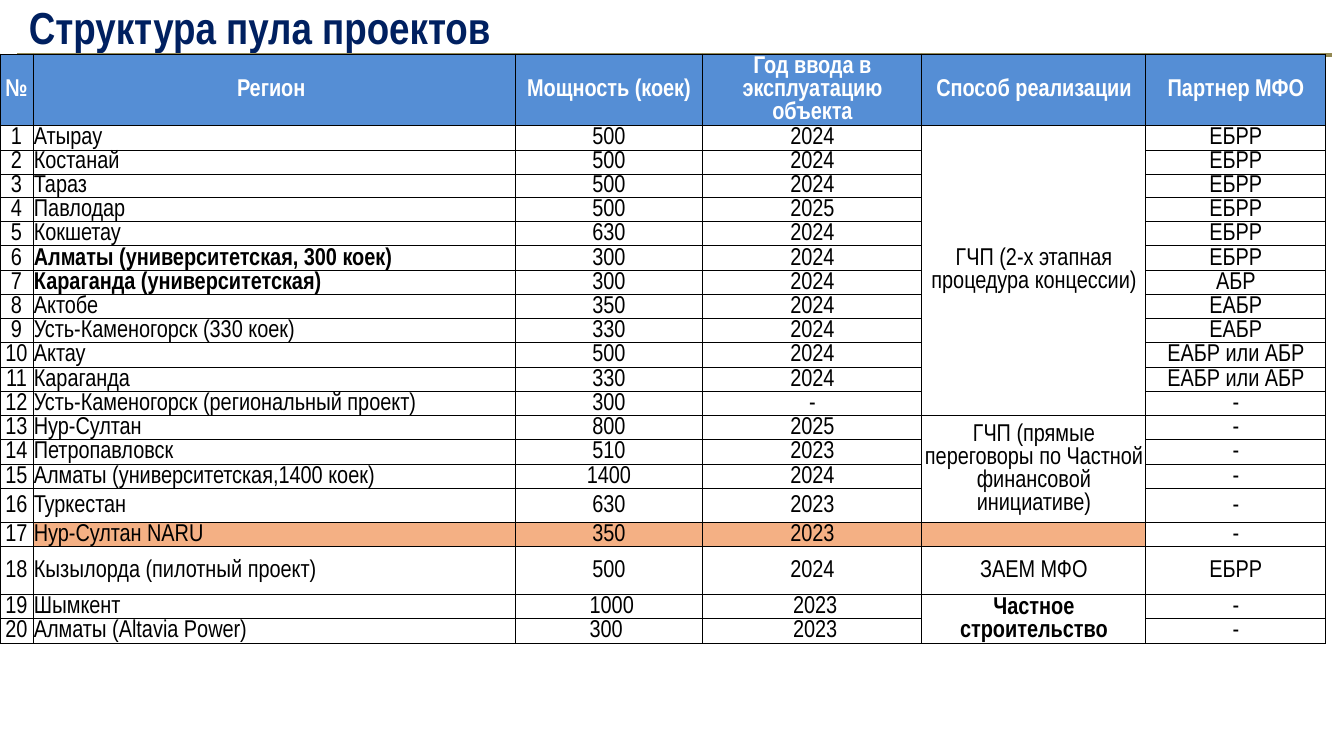
from lxml import etree
from pptx import Presentation
from pptx.dml.color import RGBColor
from pptx.enum.shapes import MSO_CONNECTOR
from pptx.enum.text import MSO_ANCHOR, MSO_AUTO_SIZE, PP_ALIGN
from pptx.oxml.ns import qn
from pptx.util import Emu, Pt

LEFT, CENTER = PP_ALIGN.LEFT, PP_ALIGN.CENTER
MIDDLE = MSO_ANCHOR.MIDDLE
NO_FIT = MSO_AUTO_SIZE.NONE
STRAIGHT = MSO_CONNECTOR.STRAIGHT
TITLE_ONLY = 5

COLORS = {
    "navy": "002060",
    "gold": "938953",
    "blue": "558ED5",
    "peach": "F4B084",
    "white": "FFFFFF",
    "black": "000000",
}

# Column and row edges of the table, in px
COLS = [0, 33, 515, 703, 922, 1146, 1326]
ROWS = [54, 125, 150, 174, 198, 222, 246, 271, 295, 319, 343, 368, 392,
        416, 440, 465, 489, 523, 547, 595, 619, 644]

HEADS = ["№", "Регион ", "Мощность (коек)",
         "Год ввода в эксплуатацию объекта", "Способ реализации",
         "Партнер МФО"]

# Region, beds, year, partner
SITES = [
    ("Атырау", "500", "2024", "ЕБРР"),
    ("Костанай", "500", "2024", "ЕБРР"),
    ("Тараз", "500", "2024", "ЕБРР"),
    ("Павлодар", "500", "2025", "ЕБРР"),
    ("Кокшетау", "630", "2024", "ЕБРР"),
    ("Алматы (университетская, 300 коек)", "300", "2024", "ЕБРР"),
    ("Караганда (университетская)", "300", "2024", "АБР"),
    ("Актобе", "350", "2024", "ЕАБР"),
    ("Усть-Каменогорск (330 коек)", "330", "2024", "ЕАБР"),
    ("Актау", "500", "2024", "ЕАБР или АБР"),
    ("Караганда", "330", "2024", "ЕАБР или АБР"),
    ("Усть-Каменогорск (региональный проект)", "300", "-", "-"),
    ("Нур-Султан", "800", "2025", "-"),
    ("Петропавловск", "510", "2023", "-"),
    ("Алматы (университетская,1400 коек)", "1400", "2024", "-"),
    ("Туркестан", "630", "2023", "-"),
    ("Нур-Султан NARU", "350", "2023", "-"),
    ("Кызылорда (пилотный проект)", "500", "2024", "ЕБРР"),
    ("Шымкент", " 1000", " 2023", "-"),
    ("Алматы (Altavia Power)", "300 ", " 2023", "-"),
]

# First row: (last row, method)
WAYS = {
    1: (12, "ГЧП (2-х этапная процедура концессии)"),
    13: (16, "ГЧП (прямые переговоры по Частной финансовой инициативе)"),
    18: (18, "ЗАЕМ МФО"),
    19: (20, "Частное строительство"),
}
WAY_COL = 4
BOLD = {(6, 1), (7, 1), (19, WAY_COL)}
MARKED = {(17, col) for col in range(1, 5)}


def px(n):
    return Emu(round(n * 914400 / 134.4))


def gaps(edges):
    return [b - a for a, b in zip(edges, edges[1:])]


class Deck:
    font = "Arial Narrow"

    def __init__(self, wide, high):
        self.prs = Presentation()
        self.prs.slide_width, self.prs.slide_height = px(wide), px(high)
        layout = self.prs.slide_layouts[TITLE_ONLY]
        self.slide = self.prs.slides.add_slide(layout)

    def color(self, name):
        return RGBColor.from_string(COLORS[name])

    def style(self, para, size, color, bold, align):
        para.alignment = align
        font = para.font
        font.name, font.size, font.bold = self.font, Pt(size), bold
        font.color.rgb = self.color(color)

    def title(self, text, x, y, w, h):
        box = self.slide.shapes.title
        box.left, box.top, box.width, box.height = map(px, (x, y, w, h))
        frame = box.text_frame
        frame.text = text
        frame.auto_size, frame.vertical_anchor = NO_FIT, MIDDLE
        frame.margin_left = frame.margin_right = px(12)
        frame.margin_top = frame.margin_bottom = px(12)
        para = frame.paragraphs[0]
        para.line_spacing, para.space_before = 0.75, Pt(4.5)
        self.style(para, 24, "navy", True, LEFT)

    def line(self, x1, y1, x2, y2, color, width):
        line = self.slide.shapes.add_connector(
            STRAIGHT, *map(px, (x1, y1, x2, y2)))
        line.line.color.rgb = self.color(color)
        line.line.width = Pt(width)
        etree.SubElement(line._element.spPr, qn("a:effectLst"))

    def table(self, cols, rows):
        wide, high = gaps(cols), gaps(rows)
        table = self.slide.shapes.add_table(
            len(high), len(wide), px(cols[0]), px(rows[0]),
            px(sum(wide)), px(sum(high))).table
        table.first_row = table.horz_banding = False
        for col, w in zip(table.columns, wide):
            col.width = px(w)
        for row, h in zip(table.rows, high):
            row.height = px(h)
        return table

    def border(self, cell):
        props = cell._tc.get_or_add_tcPr()
        for side in ("lnL", "lnR", "lnT", "lnB"):
            edge = etree.SubElement(props, qn(f"a:{side}"), w=str(Pt(0.5)))
            fill = etree.SubElement(edge, qn("a:solidFill"))
            etree.SubElement(fill, qn("a:srgbClr"), val=COLORS["black"])

    def cell(self, cell, text, color="black", bold=False, align=CENTER,
             fill=None):
        self.border(cell)
        if fill:
            cell.fill.solid()
            cell.fill.fore_color.rgb = self.color(fill)
        else:
            cell.fill.background()
        cell.margin_left = cell.margin_right = cell.margin_top = px(1)
        cell.margin_bottom = 0
        cell.vertical_anchor = MIDDLE
        if text:
            cell.text = text
        para = cell.text_frame.paragraphs[0]
        self.style(para, 13, color, bold, align)
        if not text:
            etree.SubElement(para._p, qn("a:endParaRPr"), sz="1300")


def main():
    deck = Deck(1344, 756)

    # Heading and rule
    deck.title("Структура пула проектов", 17, -12, 1308, 89)
    deck.line(1332, 55, 17, 55, "gold", 2.25)

    # Table header
    table = deck.table(COLS, ROWS)
    for col, head in enumerate(HEADS):
        deck.cell(table.cell(0, col), head, "white", True, fill="blue")

    # Project rows
    for row, (site, beds, year, bank) in enumerate(SITES, 1):
        way = WAYS.get(row, (row, ""))[1]
        for col, text in enumerate((str(row), site, beds, year, way, bank)):
            spot = (row, col)
            deck.cell(table.cell(*spot), text, bold=spot in BOLD,
                      align=LEFT if col == 1 else CENTER,
                      fill="peach" if spot in MARKED else None)

    # Shared methods
    for first, (last, _) in WAYS.items():
        if last > first:
            table.cell(first, WAY_COL).merge(table.cell(last, WAY_COL))

    deck.prs.save("out.pptx")


if __name__ == "__main__":
    main()
